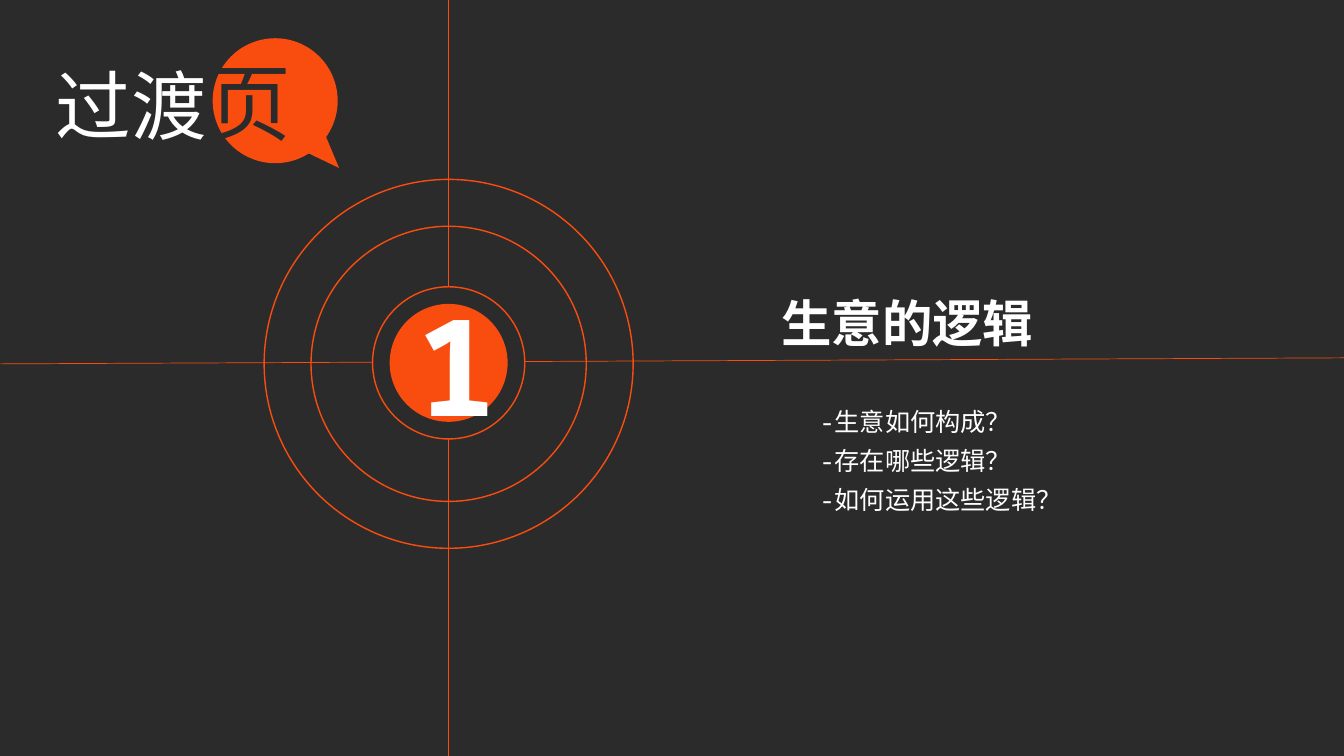
from dataclasses import dataclass

from lxml.etree import SubElement
from pptx import Presentation
from pptx.dml.color import RGBColor
from pptx.enum.lang import MSO_LANGUAGE_ID
from pptx.enum.shapes import MSO_CONNECTOR, MSO_SHAPE
from pptx.enum.text import MSO_ANCHOR, PP_ALIGN
from pptx.oxml.ns import qn
from pptx.util import Inches, Pt


@dataclass(frozen=True)
class Theme:
    dark: RGBColor = RGBColor(0x2B, 0x2B, 0x2B)
    accent: RGBColor = RGBColor(0xF9, 0x4D, 0x0F)
    light: RGBColor = RGBColor(0xFF, 0xFF, 0xFF)
    font: str = "Noto Sans Mono"
    label: int = 54
    label_accent: int = 60
    number: int = 96
    heading: int = 36
    body: int = 18
    ring_line: float = 1
    axis_line: float = 0.5


THEME = Theme()
SLIDE_W, SLIDE_H = 13.33, 7.5


def style_run(run, size, color=THEME.light, bold=False):
    font = run.font
    font.name, font.size, font.bold = THEME.font, Pt(size), bold
    font.color.rgb = color
    font.language_id = MSO_LANGUAGE_ID.SIMPLIFIED_CHINESE
    # East Asian glyphs use the same typeface
    SubElement(run._r.get_or_add_rPr(), qn("a:ea")).set("typeface", THEME.font)


def add_text(slide, left, top, width, height):
    box = slide.shapes.add_textbox(Inches(left), Inches(top), Inches(width), Inches(height))
    box.text_frame.word_wrap = True
    return box.text_frame


def add_figure(slide, kind, left, top, size, fill=None, line=None):
    figure = slide.shapes.add_shape(kind, Inches(left), Inches(top), Inches(size), Inches(size))
    figure.shadow.inherit = False
    if fill is None:
        figure.fill.background()
    else:
        figure.fill.solid()
        figure.fill.fore_color.rgb = fill
    if line is None:
        figure.line.fill.background()
    else:
        figure.line.color.rgb = line
        figure.line.width = Pt(THEME.ring_line)
    return figure


def add_circle(slide, cx, cy, diameter, fill=None, line=None):
    return add_figure(slide, MSO_SHAPE.OVAL, cx - diameter / 2, cy - diameter / 2,
                      diameter, fill, line)


def add_axis(slide, x1, y1, x2, y2):
    axis = slide.shapes.add_connector(MSO_CONNECTOR.STRAIGHT, Inches(x1), Inches(y1),
                                      Inches(x2), Inches(y2))
    axis.line.color.rgb = THEME.accent
    axis.line.width = Pt(THEME.axis_line)
    SubElement(axis._element.spPr, qn("a:effectLst"))


def page_label(slide, left, top, width, height):
    # Speech bubble behind the last character
    bubble = add_figure(slide, MSO_SHAPE.OVAL_CALLOUT, left + 1.89, top - 0.07, 1.24, THEME.accent)
    bubble.adjustments[0], bubble.adjustments[1] = 0.511, 0.538

    label = add_text(slide, left, top, width, height)
    label.vertical_anchor = MSO_ANCHOR.MIDDLE
    paragraph = label.paragraphs[0]
    paragraph.alignment = PP_ALIGN.CENTER
    for text, size, color in (("过渡", THEME.label, THEME.light),
                              ("页", THEME.label_accent, THEME.dark)):
        run = paragraph.add_run()
        run.text = text
        style_run(run, size, color)


def target(slide, cx, cy, number):
    # Outer ring and crosshair
    add_circle(slide, cx, cy, 3.66, line=THEME.accent)
    add_axis(slide, cx, 0, cx, SLIDE_H)
    add_axis(slide, 0, cy, SLIDE_W, cy - 0.06)

    # Numbered centre, then the middle ring
    add_circle(slide, cx, cy - 0.01, 1.51, THEME.dark, THEME.accent)
    centre = add_circle(slide, cx, cy - 0.01, 1.17, THEME.accent).text_frame
    centre.text = number
    centre.vertical_anchor = MSO_ANCHOR.MIDDLE
    centre.paragraphs[0].alignment = PP_ALIGN.CENTER
    style_run(centre.paragraphs[0].runs[0], THEME.number, bold=True)
    add_circle(slide, cx, cy, 2.73, line=THEME.accent)


def chapter(slide, left, top, title, questions):
    heading = add_text(slide, left, top, 2.81, 0.71)
    heading.text = title
    style_run(heading.paragraphs[0].runs[0], THEME.heading, bold=True)

    # Questions below the axis
    body = add_text(slide, left + 0.38, top + 1.04, 3.39, 1.28)
    body.text = "\n".join(questions)
    for paragraph in body.paragraphs:
        paragraph.line_spacing = 1.3
        style_run(paragraph.runs[0], THEME.body)


def main():
    prs = Presentation()
    prs.slide_width, prs.slide_height = Inches(SLIDE_W), Inches(SLIDE_H)
    slide = prs.slides.add_slide(prs.slide_layouts[6])
    slide.background.fill.solid()
    slide.background.fill.fore_color.rgb = THEME.dark

    page_label(slide, 0.22, 0.45, 3, 1.11)
    target(slide, 4.45, 3.61, "1")
    chapter(slide, 7.65, 2.85, "生意的逻辑",
            ["-生意如何构成？", "-存在哪些逻辑？", "-如何运用这些逻辑？"])
    prs.save("out.pptx")


if __name__ == "__main__":
    main()
